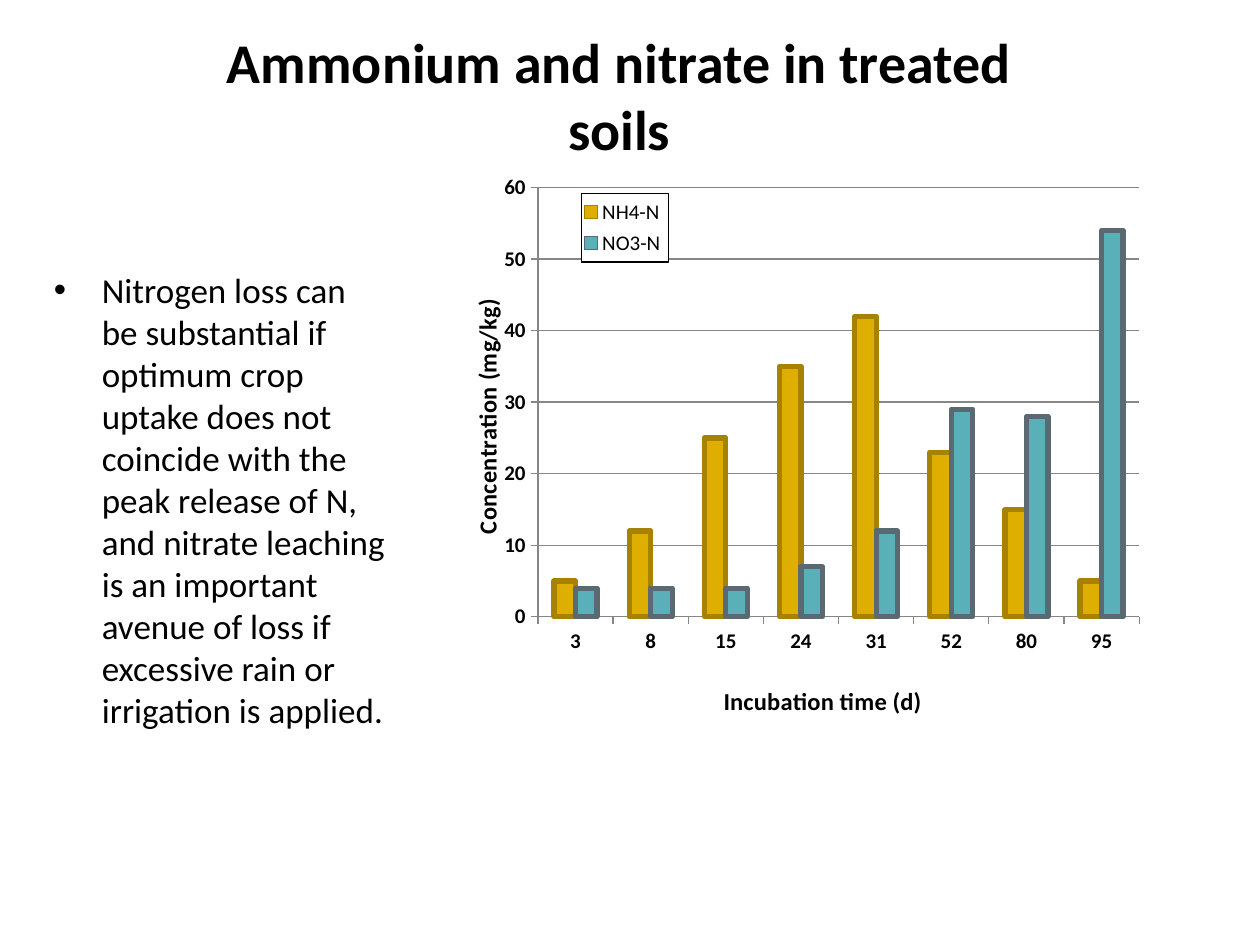
from dataclasses import dataclass

from pptx import Presentation
from pptx.chart.data import CategoryChartData
from pptx.dml.color import RGBColor
from pptx.enum.chart import XL_CHART_TYPE, XL_LEGEND_POSITION, XL_TICK_MARK
from pptx.enum.text import MSO_ANCHOR, PP_ALIGN
from pptx.oxml import parse_xml
from pptx.oxml.ns import nsdecls, qn
from pptx.util import Inches, Pt


@dataclass(frozen=True)
class Theme:
    """Colours and type sizes of the slide."""
    font: str = "Calibri"
    ink: str = "000000"
    grid: str = "868686"
    head: int = 32
    body: int = 20
    axis: int = 14
    label: int = 12
    base: int = 10
    bars: tuple = (("DEAE00", "A68200"), ("59B0B9", "5B6973"))


THEME = Theme()
DAYS = ("3", "8", "15", "24", "31", "52", "80", "95")
SERIES = {
    "NH4-N ": (5, 12, 25, 35, 42, 23, 15, 5),
    "NO3-N ": (4, 4, 4, 7, 12, 29, 28, 54),
}
CLAIM = (
    "Nitrogen loss can be substantial if optimum crop uptake does not "
    "coincide with the peak release of N, and nitrate leaching is an "
    "important avenue of loss if excessive rain or irrigation is applied."
)


def style(font, size, bold=False):
    """Set the typeface, size, weight and ink of a font."""
    font.name = THEME.font
    font.size = Pt(size)
    font.bold = bold
    font.color.rgb = RGBColor.from_string(THEME.ink)


def paint(line, tint, width):
    """Give a line its colour and its width in points."""
    line.color.rgb = RGBColor.from_string(tint)
    line.width = Pt(width)


def place(node, x, y, w=None, h=None, inner=False):
    """Fix the position of a chart part as fractions of the chart."""
    parts = [("xMode", "edge"), ("yMode", "edge"), ("x", x), ("y", y)]
    if inner:
        parts.insert(0, ("layoutTarget", "inner"))
    if w:
        parts += [("w", w), ("h", h)]
    tags = "".join(f'<c:{tag} val="{val}"/>' for tag, val in parts)
    layout = parse_xml(
        f'<c:layout {nsdecls("c")}><c:manualLayout>{tags}'
        "</c:manualLayout></c:layout>"
    )
    for old in node.findall(qn("c:layout")):
        node.remove(old)
    lead = [kid for kid in node if kid.tag in (qn("c:tx"), qn("c:legendPos"))]
    node.insert(len(lead), layout)


def add_title(slide, text):
    """Move and format the title placeholder."""
    title = slide.shapes.title
    title.left, title.top = Inches(1.25), Inches(0.17)
    title.width, title.height = Inches(7.33), Inches(1.17)
    frame = title.text_frame
    frame.text = text
    frame.word_wrap = True
    frame.vertical_anchor = MSO_ANCHOR.TOP
    para = frame.paragraphs[0]
    para.alignment = PP_ALIGN.CENTER
    style(para.runs[0].font, THEME.head, True)


def add_claim(slide, text):
    """Add the bulleted statement beside the chart."""
    box = slide.shapes.add_textbox(
        Inches(0.33), Inches(2.08), Inches(2.83), Inches(3.8))
    frame = box.text_frame
    frame.word_wrap = True
    frame.text = text
    para = frame.paragraphs[0]
    props = para._p.get_or_add_pPr()
    props.set("marL", str(Inches(0.38)))
    props.set("indent", str(-Inches(0.38)))
    props.append(parse_xml(f'<a:buFont {nsdecls("a")} typeface="Arial"/>'))
    props.append(parse_xml(f'<a:buChar {nsdecls("a")} char="•"/>'))
    style(para.runs[0].font, THEME.body)


def set_axis(axis, text, x, y):
    """Title an axis and set its ticks, labels and line."""
    frame = axis.axis_title.text_frame
    frame.text = text
    style(frame.paragraphs[0].runs[0].font, THEME.axis, True)
    place(axis.axis_title._element, x, y)
    axis.major_tick_mark = XL_TICK_MARK.OUTSIDE
    axis.minor_tick_mark = XL_TICK_MARK.NONE
    style(axis.tick_labels.font, THEME.label, True)
    paint(axis.format.line, THEME.grid, 0.75)


def set_legend(chart):
    """Put a framed legend inside the plot."""
    chart.has_legend = True
    legend = chart.legend
    legend.position = XL_LEGEND_POSITION.RIGHT
    legend.include_in_layout = False
    style(legend.font, THEME.label)
    node = legend._element
    place(node, 0.18, 0.08, 0.12, 0.12)
    node.find(qn("c:overlay")).addnext(parse_xml(
        f'<c:spPr {nsdecls("c", "a")}>'
        '<a:solidFill><a:srgbClr val="FFFFFF"/></a:solidFill>'
        f'<a:ln w="{Pt(0.75)}"><a:solidFill><a:srgbClr val="{THEME.ink}"/>'
        "</a:solidFill></a:ln></c:spPr>"
    ))


def add_bars(slide):
    """Add the clustered columns of both nitrogen forms."""
    data = CategoryChartData()
    data.categories = DAYS
    for name, vals in SERIES.items():
        data.add_series(name, vals)
    chart = slide.shapes.add_chart(
        XL_CHART_TYPE.COLUMN_CLUSTERED, Inches(3.58), Inches(1.17),
        Inches(5.75), Inches(4.58), data).chart
    chart.has_title = False
    style(chart.font, THEME.base)
    plot = chart.plots[0]
    plot.vary_by_categories = False
    plot.gap_width, plot.overlap = 150, 0
    for bar, (fill, edge) in zip(plot.series, THEME.bars):
        bar.format.fill.solid()
        bar.format.fill.fore_color.rgb = RGBColor.from_string(fill)
        paint(bar.format.line, edge, 3)
    set_axis(chart.category_axis, "Incubation time (d)", 0.37, 0.93)
    value = chart.value_axis
    set_axis(value, "Concentration (mg/kg)", 0.02, 0.26)
    value.minimum_scale, value.maximum_scale = 0, 60
    value.major_unit = 10
    paint(value.major_gridlines.format.line, THEME.grid, 0.75)
    set_legend(chart)
    area = chart._chartSpace.find(".//" + qn("c:plotArea"))
    place(area, 0.12, 0.07, 0.83, 0.75, inner=True)


def main():
    """Build and save the slide."""
    deck = Presentation()
    deck.slide_width, deck.slide_height = Inches(10), Inches(7.5)
    slide = deck.slides.add_slide(deck.slide_layouts[5])
    add_bars(slide)
    add_title(slide, "Ammonium and nitrate in treated soils")
    add_claim(slide, CLAIM)
    deck.save("out.pptx")


if __name__ == "__main__":
    main()
